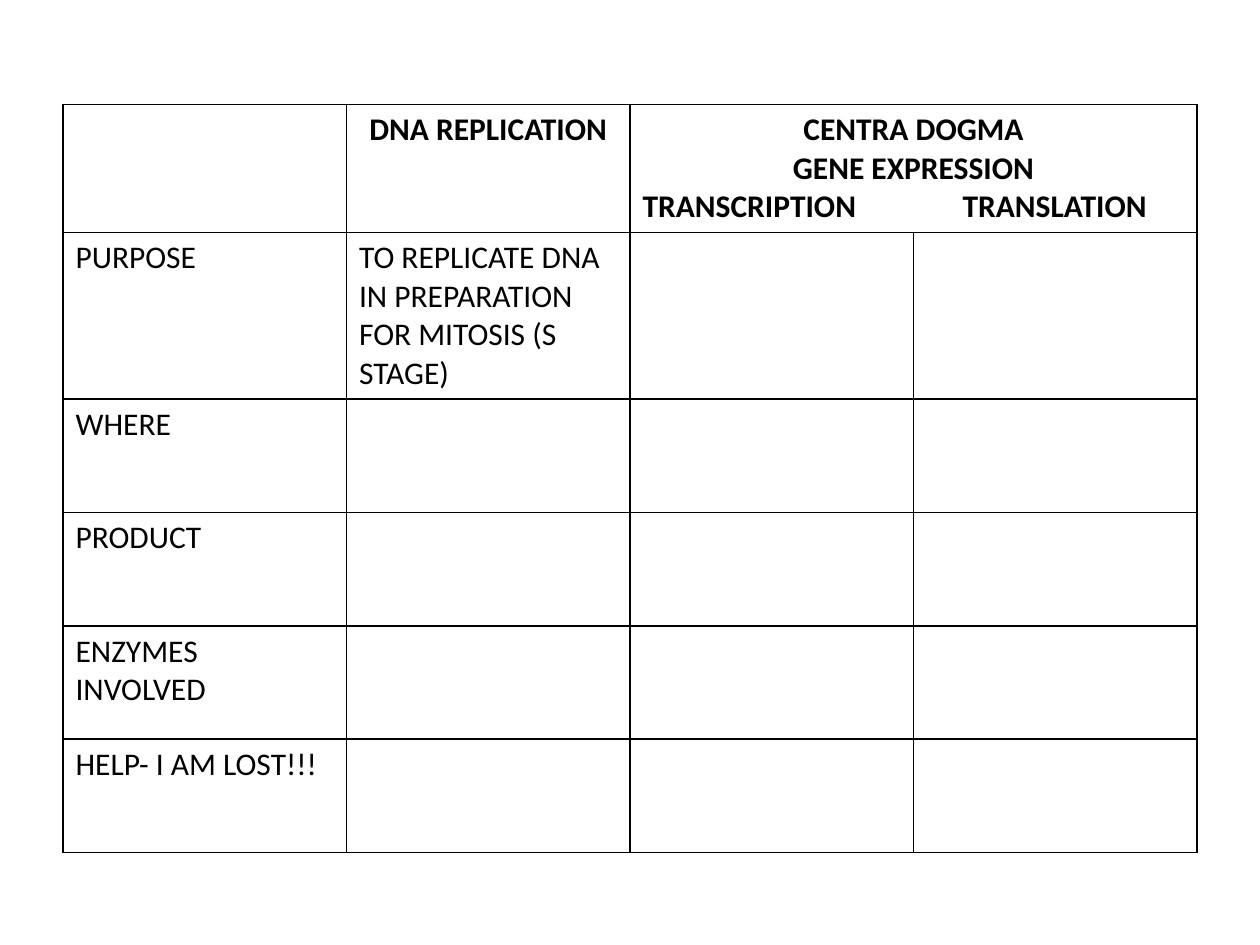
import pptx
import pptx.util
import pptx.enum.text
import pptx.dml.color
import pptx.oxml.ns
import lxml.etree

INK = {"text": "000000", "line": "000000"}
FONT = {"name": "Calibri", "size": pptx.util.Pt(18)}
ALIGN = pptx.enum.text.PP_ALIGN
COLS, ROWS = 4, 6
COL, ROW = 2.25, 0.9
LEFT, TOP = 0.5, 0.83
TAB = 2.54

HEADS = {
    1: [("DNA REPLICATION", ALIGN.CENTER)],
    2: [
        ("CENTRA DOGMA", ALIGN.CENTER),
        ("GENE EXPRESSION", ALIGN.CENTER),
        ("TRANSCRIPTION\tTRANSLATION", ALIGN.LEFT),
    ],
}
BODY = [
    ["PURPOSE", "TO REPLICATE DNA IN PREPARATION FOR MITOSIS (S STAGE)"],
    ["WHERE"],
    ["PRODUCT"],
    ["ENZYMES INVOLVED"],
    ["HELP- I AM LOST!!!"],
]


def add_node(root, tag, **vals):
    return lxml.etree.SubElement(root, pptx.oxml.ns.qn(tag), vals)


def frame(cell):
    props = cell._tc.get_or_add_tcPr()
    for side in "LRTB":
        line = add_node(props, f"a:ln{side}", w=str(pptx.util.Pt(1)))
        fill = add_node(line, "a:solidFill")
        add_node(fill, "a:srgbClr", val=INK["line"])
    cell.fill.background()


def set_tab(para):
    tabs = add_node(para._p.get_or_add_pPr(), "a:tabLst")
    add_node(tabs, "a:tab", pos=str(pptx.util.Inches(TAB)), algn="l")


def write(cell, lines, bold):
    text = cell.text_frame
    for num, (words, align) in enumerate(lines):
        para = text.add_paragraph() if num else text.paragraphs[0]
        para.alignment = align
        if "\t" in words:
            set_tab(para)
        run = para.add_run()
        run.text = words
        for key, val in {**FONT, "bold": bold}.items():
            setattr(run.font, key, val)
        run.font.color.rgb = pptx.dml.color.RGBColor.from_string(INK["text"])


def add_grid(slide):
    box = [pptx.util.Inches(n) for n in (LEFT, TOP, COLS * COL, ROWS * ROW)]
    grid = slide.shapes.add_table(ROWS, COLS, *box).table
    grid.first_row = grid.horz_banding = False
    for cell in grid.iter_cells():
        frame(cell)
    grid.cell(0, 2).merge(grid.cell(0, 3))
    return grid


def main():
    deck = pptx.Presentation()
    deck.slide_width = pptx.util.Inches(10)
    deck.slide_height = pptx.util.Inches(7.5)
    slide = deck.slides.add_slide(deck.slide_layouts[6])
    grid = add_grid(slide)
    for col, lines in HEADS.items():
        write(grid.cell(0, col), lines, True)
    for row, texts in enumerate(BODY, 1):
        for col, words in enumerate(texts):
            write(grid.cell(row, col), [(words, ALIGN.LEFT)], False)
    deck.save("out.pptx")


if __name__ == "__main__":
    main()
